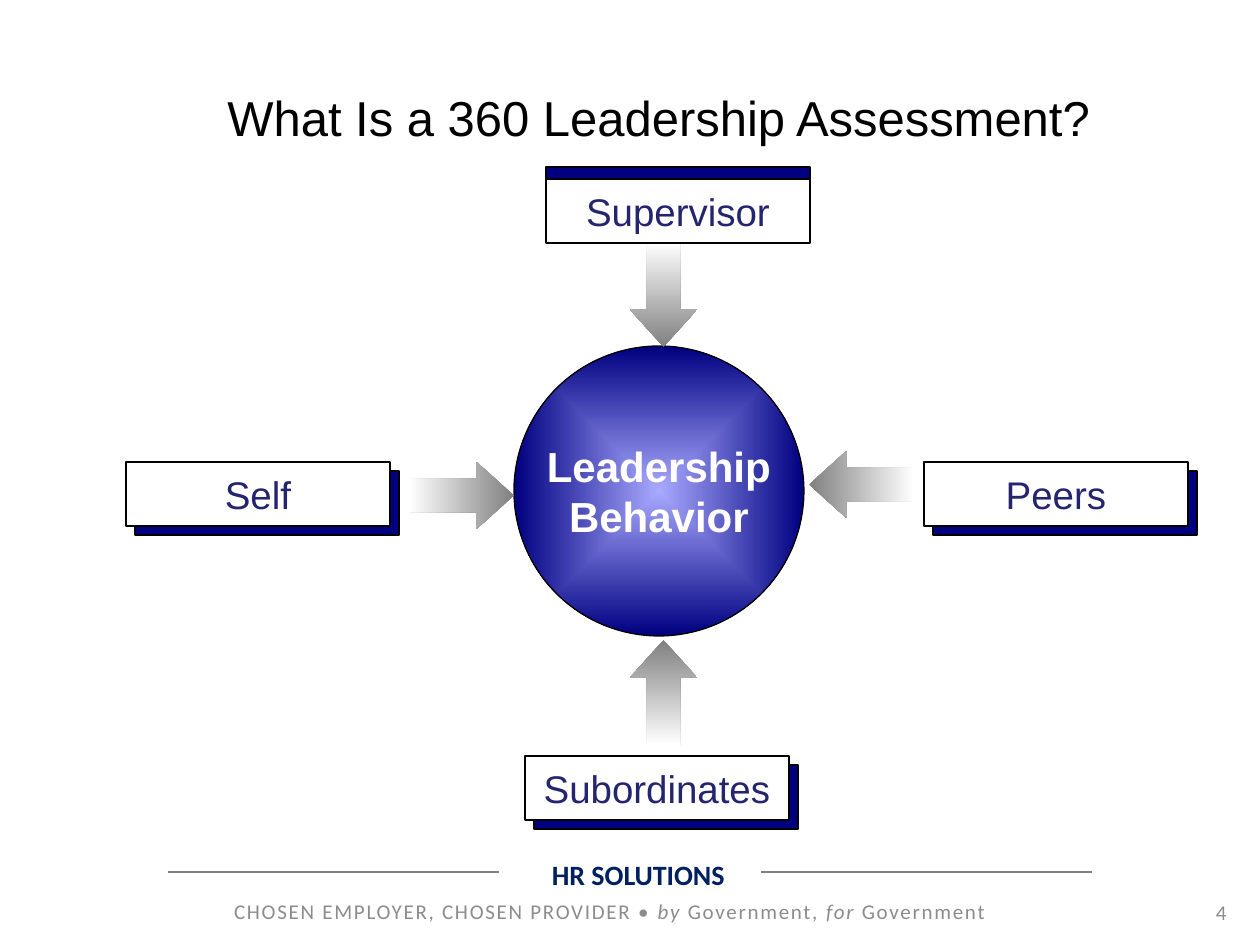
from lxml import etree
from pptx import Presentation
from pptx.dml.color import RGBColor
from pptx.enum.shapes import MSO_CONNECTOR, MSO_SHAPE
from pptx.enum.text import MSO_ANCHOR, PP_ALIGN
from pptx.oxml.ns import qn
from pptx.util import Pt

PX = 914400 // 126
CENTER, RIGHT = PP_ALIGN.CENTER, PP_ALIGN.RIGHT
TOP, MIDDLE = MSO_ANCHOR.TOP, MSO_ANCHOR.MIDDLE
NAVY, BLACK, WHITE, GRAY = "000080", "000000", "FFFFFF", "808080"
FOOTER_GRAY = "8C8C8C"

# Content: places are (left, top, width, height) in px
TITLE = "What Is a 360 Leadership Assessment?"
CORE = ["Leadership", "Behavior"]
CORE_BOX = (514, 346, 290, 290)
BOX_SIZE = (264, 64)
RATERS = [  # label, left, top, backing offset
    ("Subordinates", 525, 756, (9, 9)),
    ("Peers", 924, 462, (9, 9)),
    ("Supervisor", 546, 179, (0, -12)),
    ("Self", 126, 462, (9, 9)),
]
ARROW_SIZE = (67, 105)
ARROWS = [(630, 640, 0), (630, 242, 180), (428, 443, 90), (828, 432, 270)]
BRAND = "HR SOLUTIONS"
MOTTO = [  # text, italic
    ("CHOSEN EMPLOYER, CHOSEN PROVIDER • ", False),
    ("by ", True),
    ("Government, ", False),
    ("for", True),
    (" Government", False),
]
PAGE = "4"

presentation = Presentation()
presentation.slide_width, presentation.slide_height = 1260 * PX, 945 * PX
slide = presentation.slides.add_slide(presentation.slide_layouts[6])


def color(value):
    return RGBColor.from_string(value)


def scaled(box):
    return [length * PX for length in box]


def style(font, size, value, name="Arial", bold=False):
    font.name, font.size, font.bold = name, Pt(size), bold
    font.color.rgb = color(value)


def write(shape, lines, size, value, name="Arial", bold=False,
          align=CENTER, anchor=MIDDLE, wrap=True):
    frame = shape.text_frame
    frame.word_wrap, frame.vertical_anchor = wrap, anchor
    frame.text = "\n".join(lines)
    for paragraph in frame.paragraphs:
        paragraph.alignment = align
        style(paragraph.font, size, value, name, bold)
    return frame


def add_text(box, *args, **options):
    return write(slide.shapes.add_textbox(*scaled(box)), *args, **options)


def add_shape(kind, box, fill=None, line=None):
    shape = slide.shapes.add_shape(kind, *scaled(box))
    shape.shadow.inherit = False
    if fill:
        shape.fill.solid()
        shape.fill.fore_color.rgb = color(fill)
    if line:
        shape.line.color.rgb = color(line)
        shape.line.width = Pt(0.75)
    else:
        shape.line.fill.background()
    return shape


def fill_gradient(shape, start, end):
    shape.fill.gradient()
    shape.fill.gradient_angle = 270  # counter-clockwise: top to bottom
    for stop, value, position in zip(shape.fill.gradient_stops, (start, end), (0, 1)):
        stop.color.rgb = color(value)
        stop.position = position


def make_radial(shape):
    linear = shape._element.spPr.find(".//" + qn("a:lin"))
    radial = etree.Element(qn("a:path"), {"path": "shape"})
    middle = {side: "50000" for side in "ltrb"}
    etree.SubElement(radial, qn("a:fillToRect"), middle)
    linear.getparent().replace(linear, radial)


# Footer: rule, brand, motto, page number
rule = slide.shapes.add_connector(MSO_CONNECTOR.STRAIGHT, *scaled((168, 872, 1092, 872)))
rule.line.color.rgb = color(GRAY)
rule.line.width = Pt(0.75)
etree.SubElement(rule._element.spPr, qn("a:effectLst"))

brand = add_shape(MSO_SHAPE.RECTANGLE, (499, 851, 262, 47), WHITE)
brand_frame = write(brand, [BRAND], 16, "002060", "Calibri", bold=True, anchor=TOP)
brand_frame.margin_left = 29 * PX

motto = add_text((158, 892, 903, 38), [""], 12, FOOTER_GRAY, "Calibri", anchor=TOP)
for text, italic in MOTTO:
    run = motto.paragraphs[0].add_run()
    run.text = text
    run.font.italic = italic
    run.font._element.set("spc", "100")

add_text((1050, 901, 189, 23), [PAGE], 12, FOOTER_GRAY, "Calibri", align=RIGHT)

# Title
add_text((199, 38, 919, 157), [TITLE], 28, BLACK)

# Central circle
core = add_shape(MSO_SHAPE.OVAL, CORE_BOX, line=BLACK)
fill_gradient(core, "A9A9FF", NAVY)
make_radial(core)
write(core, CORE, 24, WHITE, bold=True, wrap=False)

# Arrows pointing at the circle
for left, top, rotation in ARROWS:
    arrow = add_shape(MSO_SHAPE.UP_ARROW, (left, top, *ARROW_SIZE))
    arrow.rotation = rotation
    arrow.adjustments[0], arrow.adjustments[1] = 0.5, 0.56
    fill_gradient(arrow, GRAY, WHITE)

# Rater boxes, each over a navy backing
for label, left, top, (shift_x, shift_y) in RATERS:
    add_shape(MSO_SHAPE.RECTANGLE, (left + shift_x, top + shift_y, *BOX_SIZE), NAVY, BLACK)
    box = add_shape(MSO_SHAPE.RECTANGLE, (left, top, *BOX_SIZE), WHITE, BLACK)
    write(box, [label], 22, "25256F", wrap=False)

presentation.save("out.pptx")
